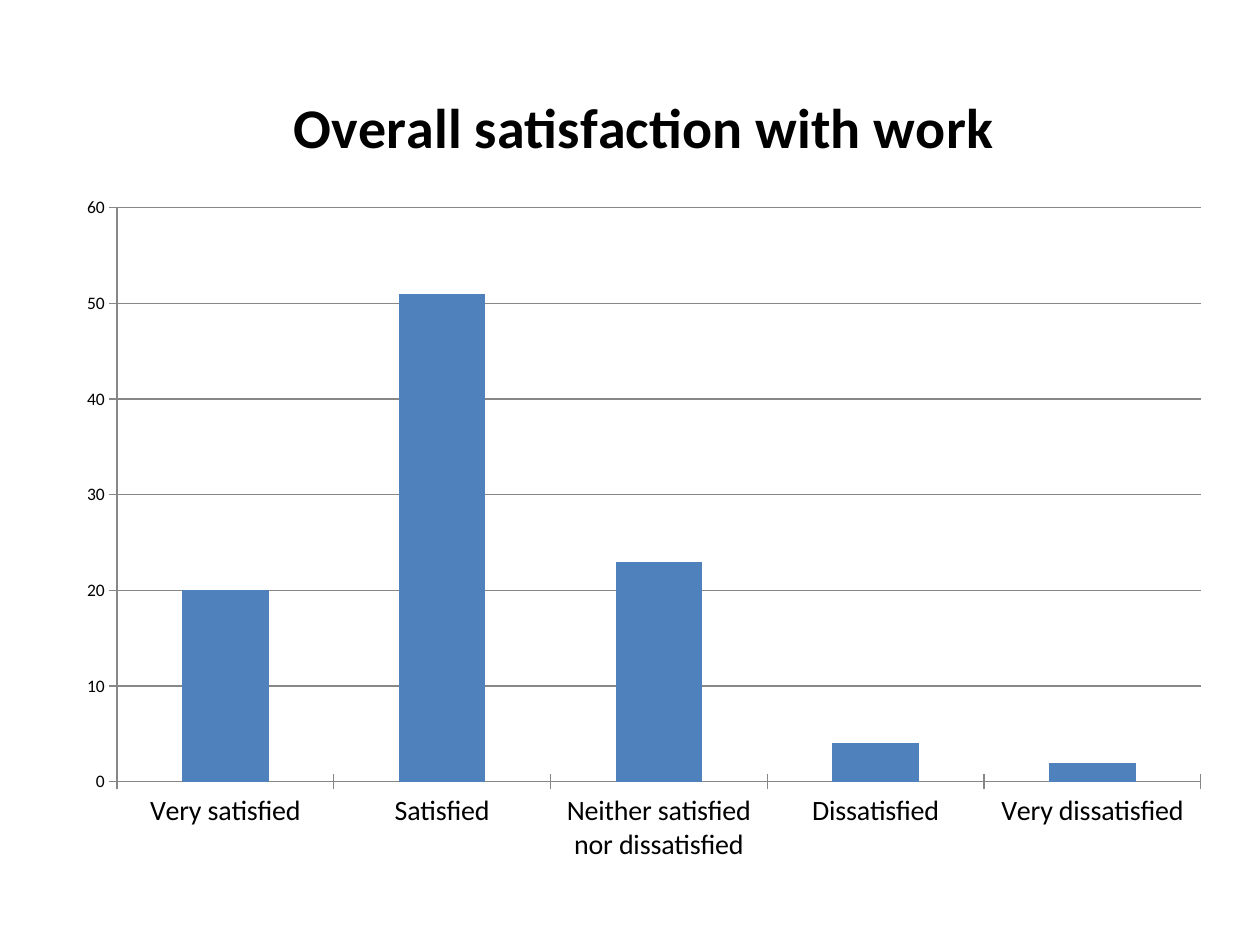
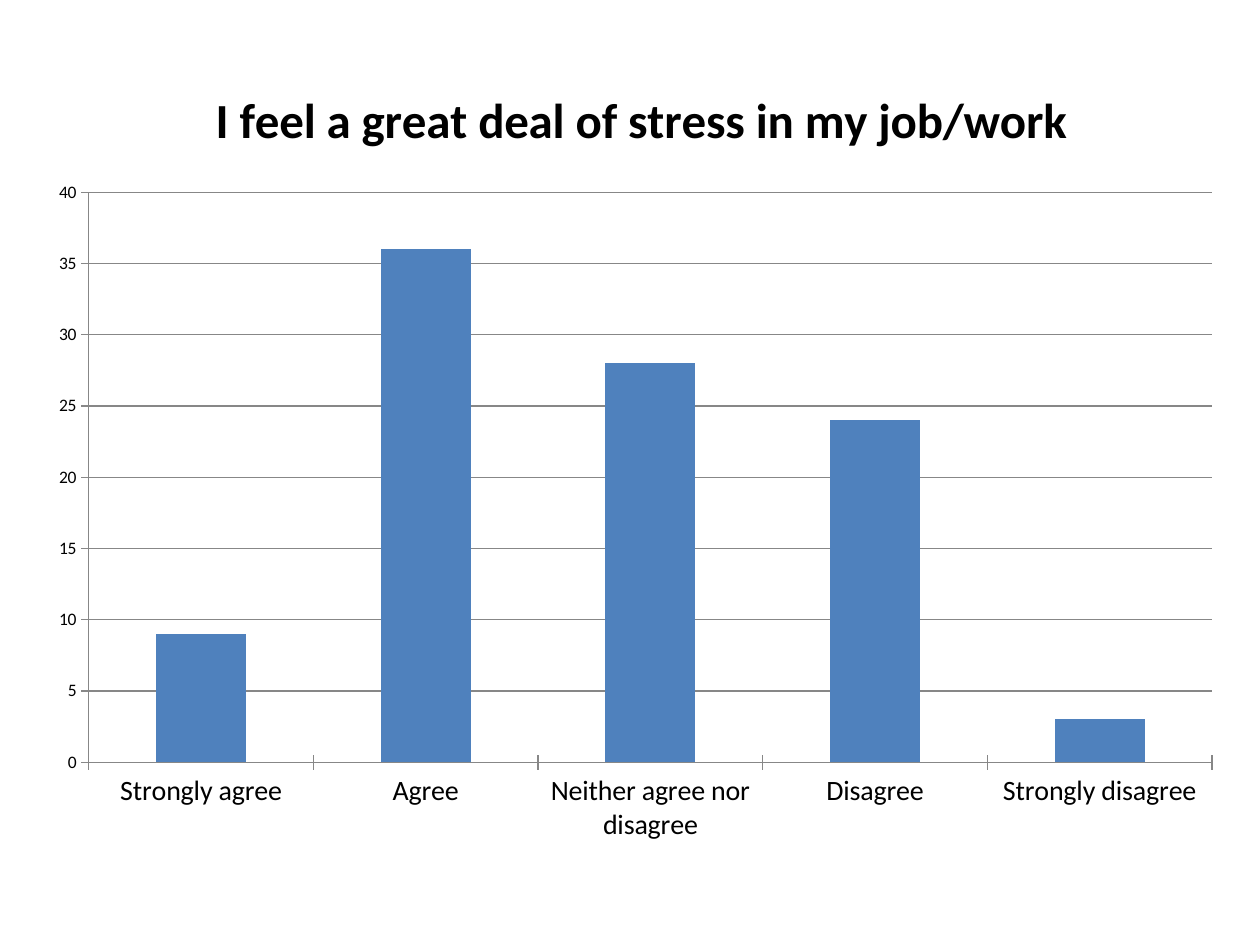
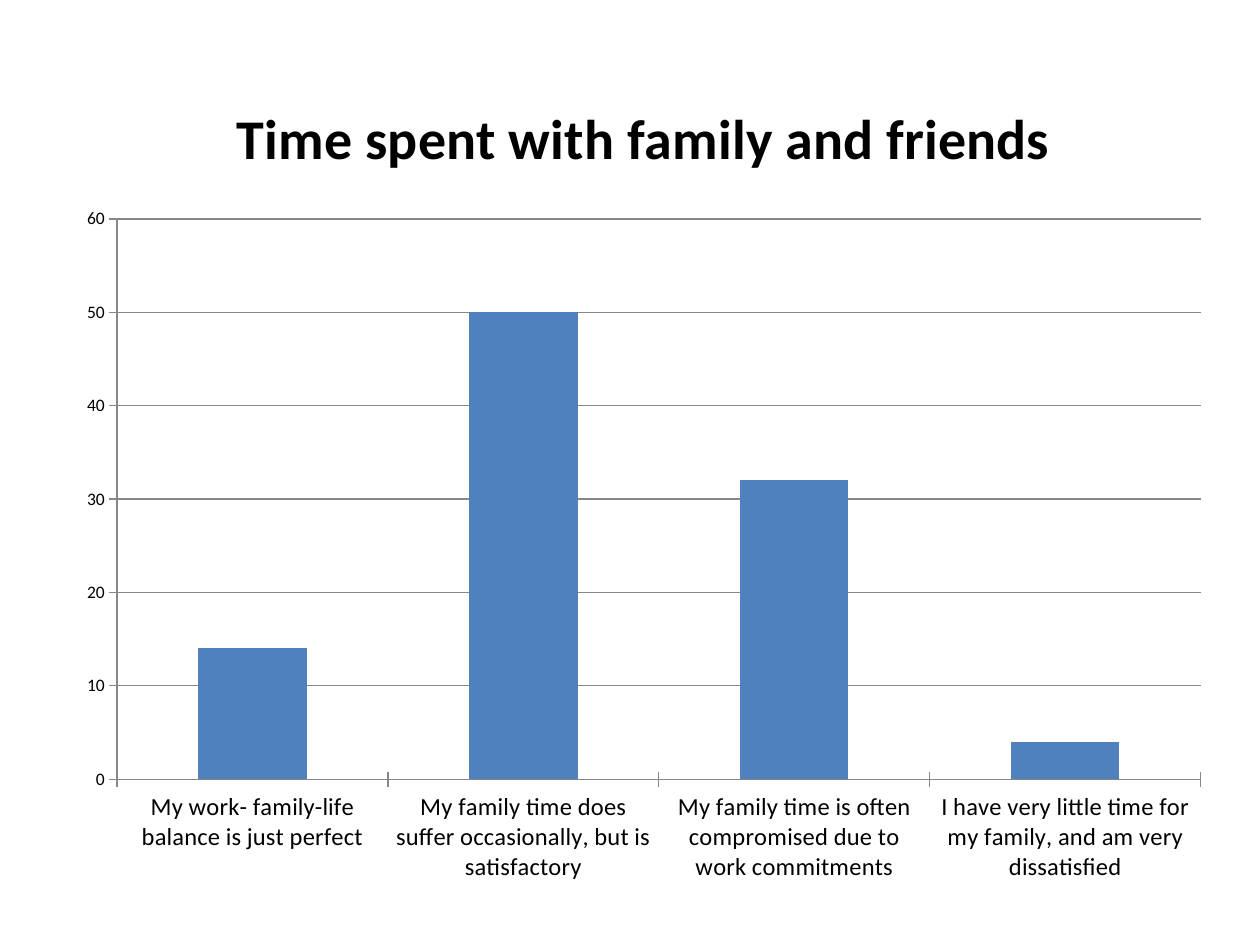
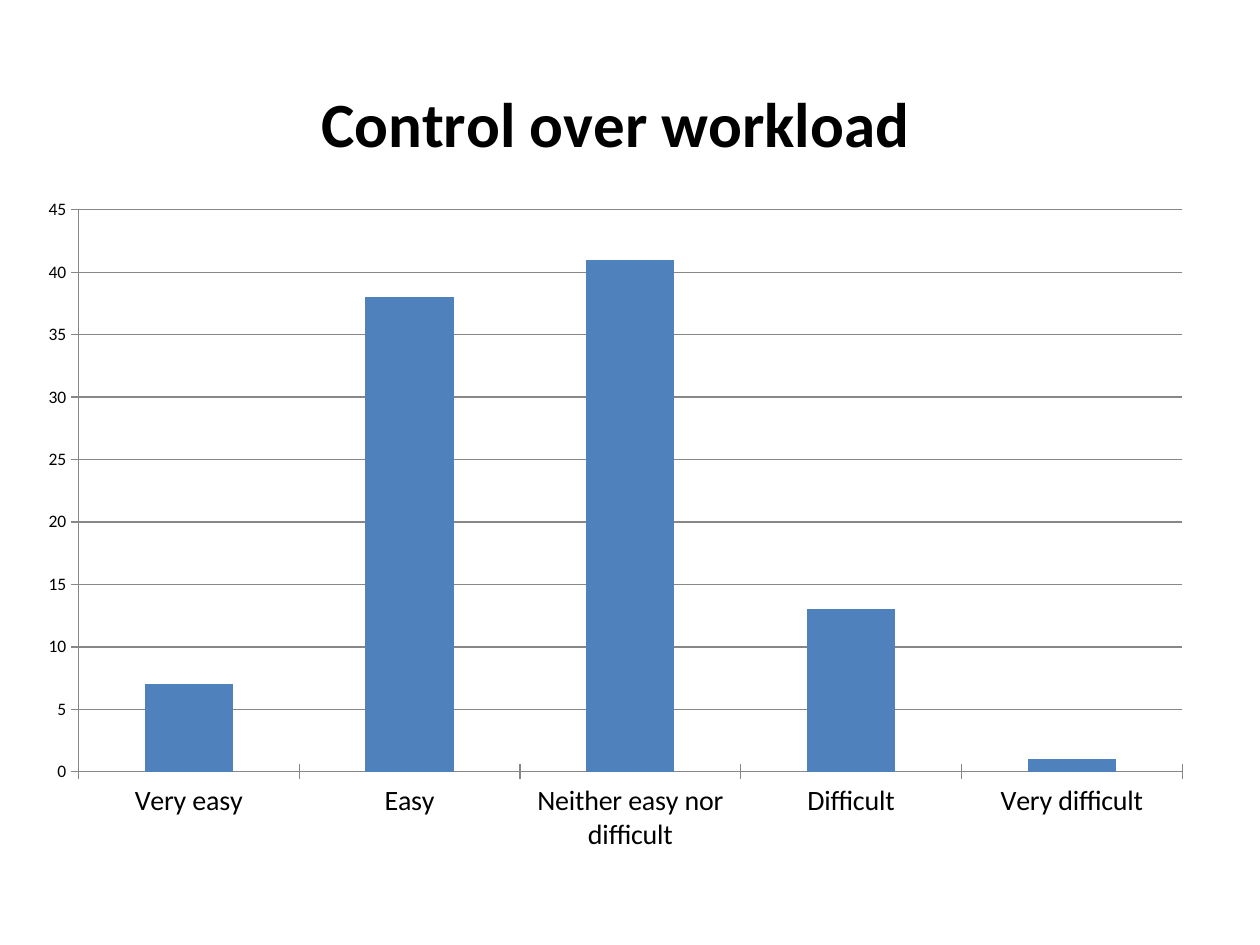
from pptx import Presentation
from pptx.chart.data import CategoryChartData as Data
from pptx.dml.color import RGBColor
from pptx.enum.chart import XL_CHART_TYPE as Kind, XL_TICK_MARK as Tick
from pptx.util import Emu, Pt

SCALE = 914400 / 126
FONT = "Calibri"
INK = "000000"
BAR = "4F81BD"
LINE = "878787"


def px(size):
    return Emu(round(size * SCALE))


def paint(color, code):
    color.rgb = RGBColor.from_string(code)


POLLS = [
    (" ".join(["Overall satisfaction with work"]), 32, 16, (64, 55, 1160, 824), {
        "Very satisfied": 20,
        "Satisfied": 51,
        "Neither satisfied nor dissatisfied": 23,
        "Dissatisfied": 4,
        "Very dissatisfied": 2,
    }),
    (" I feel a great deal of stress in my job/work", 28, 16, (35, 55, 1201, 804), {
        "Strongly agree": 9,
        "Agree": 36,
        "Neither agree nor disagree": 28,
        "Disagree": 24,
        "Strongly disagree": 3,
    }),
    ("Time spent with family and friends", 32, 14, (64, 66, 1160, 833), {
        "My work- family-life balance is just perfect": 14,
        "My family time does suffer occasionally, but is satisfactory": 50,
        "My family time is often compromised due to work commitments": 32,
        "I have very little time for my family, and am very dissatisfied": 4,
    }),
    ("Control over workload", 36, 16, (25, 45, 1181, 824), {
        "Very easy": 7,
        "Easy": 38,
        "Neither easy nor difficult": 41,
        "Difficult": 13,
        "Very difficult": 1,
    }),
]

deck = Presentation()
deck.slide_width, deck.slide_height = px(1260), px(945)
blank = deck.slide_layouts[6]

for title, head, label, box, votes in POLLS:
    slide = deck.slides.add_slide(blank)
    data = Data()
    data.categories = list(votes)
    data.add_series(title, list(votes.values()))
    chart = slide.shapes.add_chart(Kind.COLUMN_CLUSTERED, *map(px, box), data).chart
    chart.has_legend = False
    chart.font.name = FONT
    chart.font.size = Pt(10)
    paint(chart.font.color, INK)

    chart.has_title = True
    chart.chart_title.include_in_layout = False
    frame = chart.chart_title.text_frame
    frame.text = title
    font = frame.paragraphs[0].runs[0].font
    font.name, font.size, font.bold = FONT, Pt(head), True
    paint(font.color, INK)

    plot = chart.plots[0]
    plot.gap_width = 150
    plot.vary_by_categories = False
    fill = plot.series[0].format.fill
    fill.solid()
    paint(fill.fore_color, BAR)

    cats, vals = chart.category_axis, chart.value_axis
    cats.tick_labels.font.size = Pt(label)
    vals.has_major_gridlines = True
    for axis in (cats, vals):
        axis.major_tick_mark = Tick.CROSS
    for part in (cats, vals, vals.major_gridlines):
        line = part.format.line
        line.width = Pt(0.75)
        paint(line.color, LINE)

deck.save("out.pptx")
